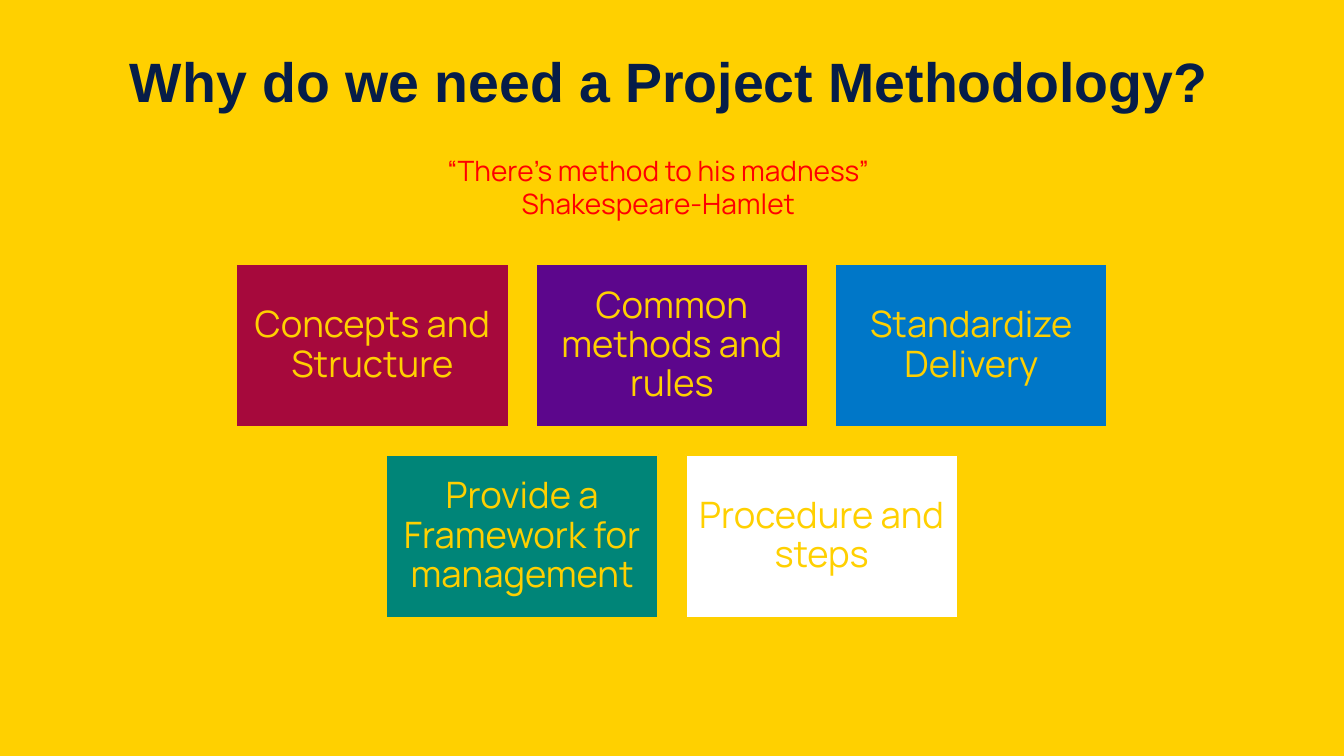
from pptx import Presentation
from pptx.dml.color import RGBColor
from pptx.enum.shapes import MSO_SHAPE
from pptx.enum.text import MSO_ANCHOR, PP_ALIGN
from pptx.util import Inches, Pt

RECTANGLE = MSO_SHAPE.RECTANGLE
TOP, MIDDLE = MSO_ANCHOR.TOP, MSO_ANCHOR.MIDDLE
LEFT, CENTER = PP_ALIGN.LEFT, PP_ALIGN.CENTER

YELLOW = RGBColor(0xFF, 0xD0, 0x00)
NAVY = RGBColor(0x06, 0x1D, 0x48)
RED = RGBColor(0xFF, 0x00, 0x00)
CRIMSON = RGBColor(0xA6, 0x09, 0x3C)
PURPLE = RGBColor(0x5C, 0x06, 0x8C)
BLUE = RGBColor(0x00, 0x77, 0xC8)
TEAL = RGBColor(0x00, 0x85, 0x78)
WHITE = RGBColor(0xFF, 0xFF, 0xFF)

SLIDE_WIDTH, SLIDE_HEIGHT = 13.33, 7.5
CARD_WIDTH, CARD_HEIGHT, CARD_GAP = 2.7, 1.62, 0.27
CARDS_TOP = 2.62
CARD_MARGIN = 0.11

CARD_ROWS = [
    [("Concepts and Structure", CRIMSON),
     ("Common methods and rules", PURPLE),
     ("Standardize Delivery", BLUE)],
    [("Provide a Framework for management", TEAL),
     ("Procedure and steps", WHITE)],
]


def write_text(shape, text, *, size, color, font="Manrope", bold=False,
               align=CENTER, anchor=MIDDLE, line_spacing=None):
    """Fill a shape with text, one paragraph per line, in a single format."""
    frame = shape.text_frame
    frame.word_wrap = True
    frame.vertical_anchor = anchor
    frame.text = text
    for paragraph in frame.paragraphs:
        paragraph.alignment = align
        paragraph.line_spacing = line_spacing
        paragraph.font.name = font
        paragraph.font.size = Pt(size)
        paragraph.font.bold = bold
        paragraph.font.color.rgb = color


def add_text(slide, left, top, width, height, text, **text_format):
    """Add a text box with formatted text."""
    box = slide.shapes.add_textbox(
        Inches(left), Inches(top), Inches(width), Inches(height))
    write_text(box, text, **text_format)


def add_card(slide, left, top, text, fill):
    """Add a coloured card with its label centred inside."""
    card = slide.shapes.add_shape(
        RECTANGLE, Inches(left), Inches(top),
        Inches(CARD_WIDTH), Inches(CARD_HEIGHT))
    card.shadow.inherit = False
    card.fill.solid()
    card.fill.fore_color.rgb = fill
    card.line.color.rgb = YELLOW
    card.line.width = Pt(1.5)
    frame = card.text_frame
    frame.margin_left = frame.margin_right = Inches(CARD_MARGIN)
    frame.margin_top = frame.margin_bottom = Inches(CARD_MARGIN)
    write_text(card, text, size=26, color=YELLOW, line_spacing=0.9)


def add_card_rows(slide, rows):
    """Lay out rows of cards, each row centred on the slide."""
    for row_index, row in enumerate(rows):
        row_width = len(row) * (CARD_WIDTH + CARD_GAP) - CARD_GAP
        row_left = (SLIDE_WIDTH - row_width) / 2
        top = CARDS_TOP + row_index * (CARD_HEIGHT + CARD_GAP)
        for column, (text, fill) in enumerate(row):
            left = row_left + column * (CARD_WIDTH + CARD_GAP)
            add_card(slide, left, top, text, fill)


def main():
    """Build the slide and save it."""
    presentation = Presentation()
    presentation.slide_width = Inches(SLIDE_WIDTH)
    presentation.slide_height = Inches(SLIDE_HEIGHT)
    slide = presentation.slides.add_slide(presentation.slide_layouts[6])
    slide.background.fill.solid()
    slide.background.fill.fore_color.rgb = YELLOW

    add_text(slide, 1.19, 0.4, 10.91, 0.87,
             "Why do we need a Project Methodology?", size=39.6, color=NAVY,
             font="Arial", bold=True, align=LEFT, line_spacing=0.9)
    add_card_rows(slide, CARD_ROWS)
    add_text(slide, 4.03, 1.47, 5, 0.77,
             "“There’s method to his madness”\nShakespeare-Hamlet",
             size=20, color=RED, anchor=TOP)
    presentation.save("out.pptx")


if __name__ == "__main__":
    main()
